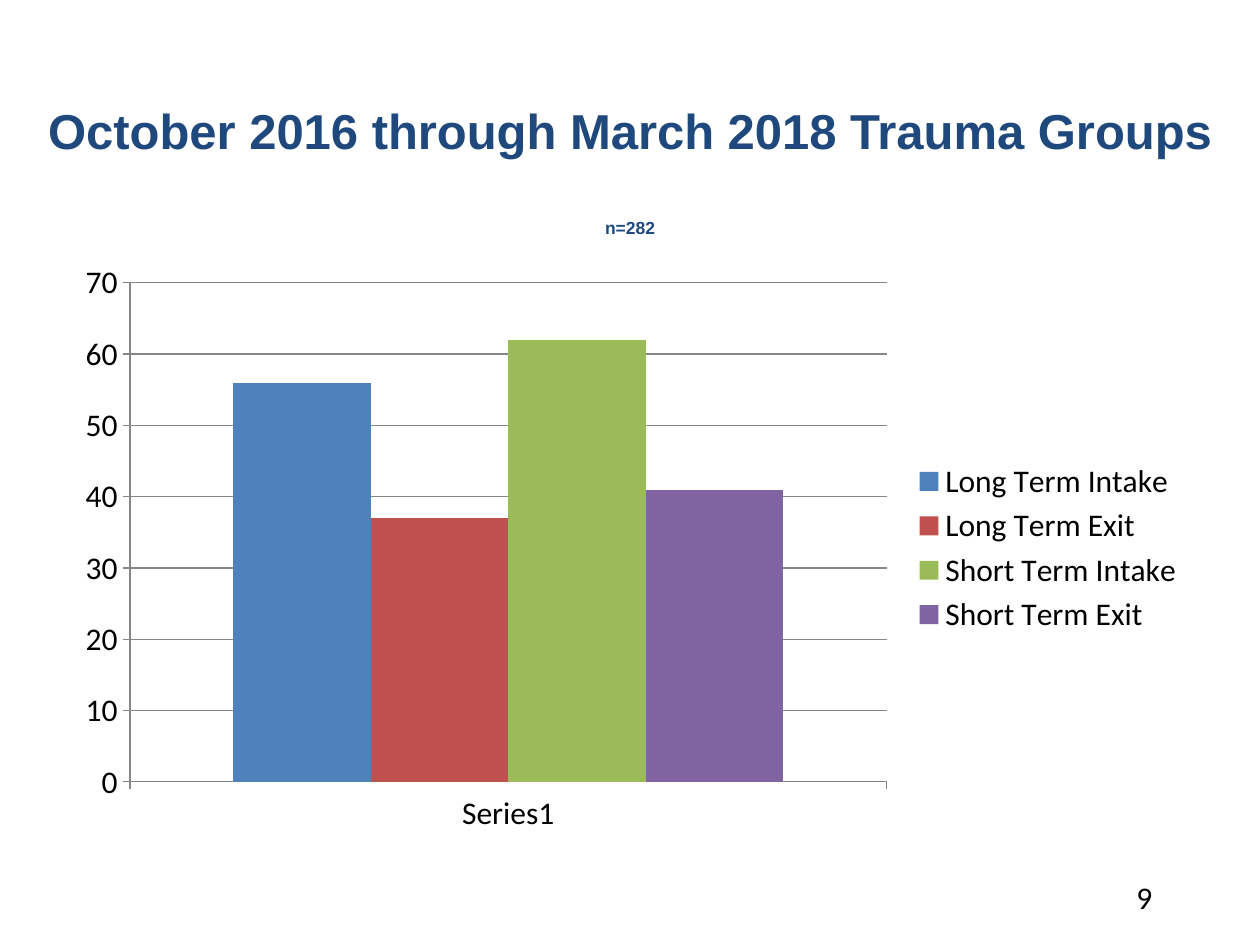
from dataclasses import dataclass

from pptx import Presentation
from pptx.chart.data import CategoryChartData
from pptx.dml.color import RGBColor
from pptx.enum.chart import XL_CHART_TYPE as ChartType
from pptx.enum.chart import XL_LEGEND_POSITION as LegendSide
from pptx.enum.chart import XL_TICK_MARK as TickMark
from pptx.enum.text import MSO_ANCHOR as Anchor
from pptx.enum.text import MSO_AUTO_SIZE as AutoSize
from pptx.enum.text import PP_ALIGN as Align
from pptx.util import Inches, Pt


@dataclass(frozen=True)
class Theme:
    """Colours, fonts and type sizes of the slide."""
    heading: str = "1F497D"
    ink: str = "000000"
    rule: str = "868686"
    heading_font: str = "Arial"
    body_font: str = "Calibri"
    heading_size: int = 28
    sample_size: int = 10
    body_size: int = 18


THEME = Theme()
COLUMNS, ROWS = 40, 30
WIDTH, HEIGHT = Inches(10), Inches(7.5)
CATEGORY = "Series1"
TRAUMA_GROUPS = [
    ("Long Term Intake", 56, "4F81BD"),
    ("Long Term Exit", 37, "C0504D"),
    ("Short Term Intake", 62, "9BBB59"),
    ("Short Term Exit", 41, "8064A2"),
]


def apply_format(target, **values):
    """Set each named attribute on the target."""
    for name, value in values.items():
        setattr(target, name, value)


def style_font(font, face, size, color, bold=False):
    """Give a font its face, size, colour and weight."""
    apply_format(font, name=face, size=Pt(size), bold=bold)
    font.color.rgb = RGBColor.from_string(color)


def cells(column, row, across, down):
    """Turn grid columns and rows into a left, top, width and height."""
    return (round(WIDTH * column / COLUMNS), round(HEIGHT * row / ROWS),
            round(WIDTH * across / COLUMNS), round(HEIGHT * down / ROWS))


def add_heading(slide, heading, sample):
    """Fill the title placeholder with the heading and the sample size."""
    title = slide.shapes.title
    apply_format(title, **dict(zip(("left", "top", "width", "height"),
                                   cells(0, 3, COLUMNS, 2.32))))
    frame = title.text_frame
    apply_format(frame, word_wrap=True, auto_size=AutoSize.NONE,
                 vertical_anchor=Anchor.TOP)
    lines = [(heading, THEME.heading_size, 0), (sample, THEME.sample_size, 33)]
    frame.text = "\n".join(text for text, _, _ in lines)
    for paragraph, (_, size, gap) in zip(frame.paragraphs, lines):
        apply_format(paragraph, alignment=Align.CENTER, space_before=Pt(gap))
        style_font(paragraph.font, THEME.heading_font, size, THEME.heading, True)


def style_axis(axis):
    """Give an axis its ticks and line colour."""
    apply_format(axis, major_tick_mark=TickMark.OUTSIDE,
                 minor_tick_mark=TickMark.NONE)
    axis.format.line.color.rgb = RGBColor.from_string(THEME.rule)


def add_group_chart(slide):
    """Add the clustered columns of intake and exit scores."""
    data = CategoryChartData()
    data.categories = [CATEGORY]
    for group, score, _ in TRAUMA_GROUPS:
        data.add_series(group, [score])
    chart = slide.shapes.add_chart(
        ChartType.COLUMN_CLUSTERED, *cells(2, 8, 36, 18.8), data).chart
    apply_format(chart, has_title=False, has_legend=True)
    style_font(chart.font, THEME.body_font, THEME.body_size, THEME.ink)
    apply_format(chart.legend, position=LegendSide.RIGHT, include_in_layout=False)

    columns = chart.plots[0]
    apply_format(columns, gap_width=150, overlap=0, vary_by_categories=False)
    for series, (_, _, color) in zip(columns.series, TRAUMA_GROUPS):
        series.format.fill.solid()
        series.format.fill.fore_color.rgb = RGBColor.from_string(color)

    scores = chart.value_axis
    for axis in (chart.category_axis, scores):
        style_axis(axis)
    apply_format(scores, minimum_scale=0, maximum_scale=70, major_unit=10,
                 has_major_gridlines=True)
    gridline = scores.major_gridlines.format.line
    gridline.color.rgb = RGBColor.from_string(THEME.rule)


def add_page_number(slide, number):
    """Place the page number in a clear outline at the lower right."""
    left, top, width, height = cells(35.68, 27.68, 3, 1.2)
    right, bottom = left + width, top + height
    outline = slide.shapes.build_freeform(left, top)
    outline.add_line_segments([(right, top), (right, bottom), (left, bottom)])
    page = outline.convert_to_shape()
    page.shadow.inherit = False
    page.fill.background()
    page.line.fill.background()
    frame = page.text_frame
    apply_format(frame, word_wrap=True, vertical_anchor=Anchor.TOP)
    frame.text = number
    paragraph = frame.paragraphs[0]
    paragraph.alignment = Align.LEFT
    style_font(paragraph.font, THEME.body_font, THEME.body_size, THEME.ink)


def main():
    """Build the slide and save it."""
    deck = Presentation()
    apply_format(deck, slide_width=WIDTH, slide_height=HEIGHT)
    slide = deck.slides.add_slide(deck.slide_layouts.get_by_name("Title Only"))
    add_page_number(slide, "9")
    add_group_chart(slide)
    add_heading(slide, "October 2016 through March 2018 Trauma Groups", "n=282")
    deck.save("out.pptx")


if __name__ == "__main__":
    main()
